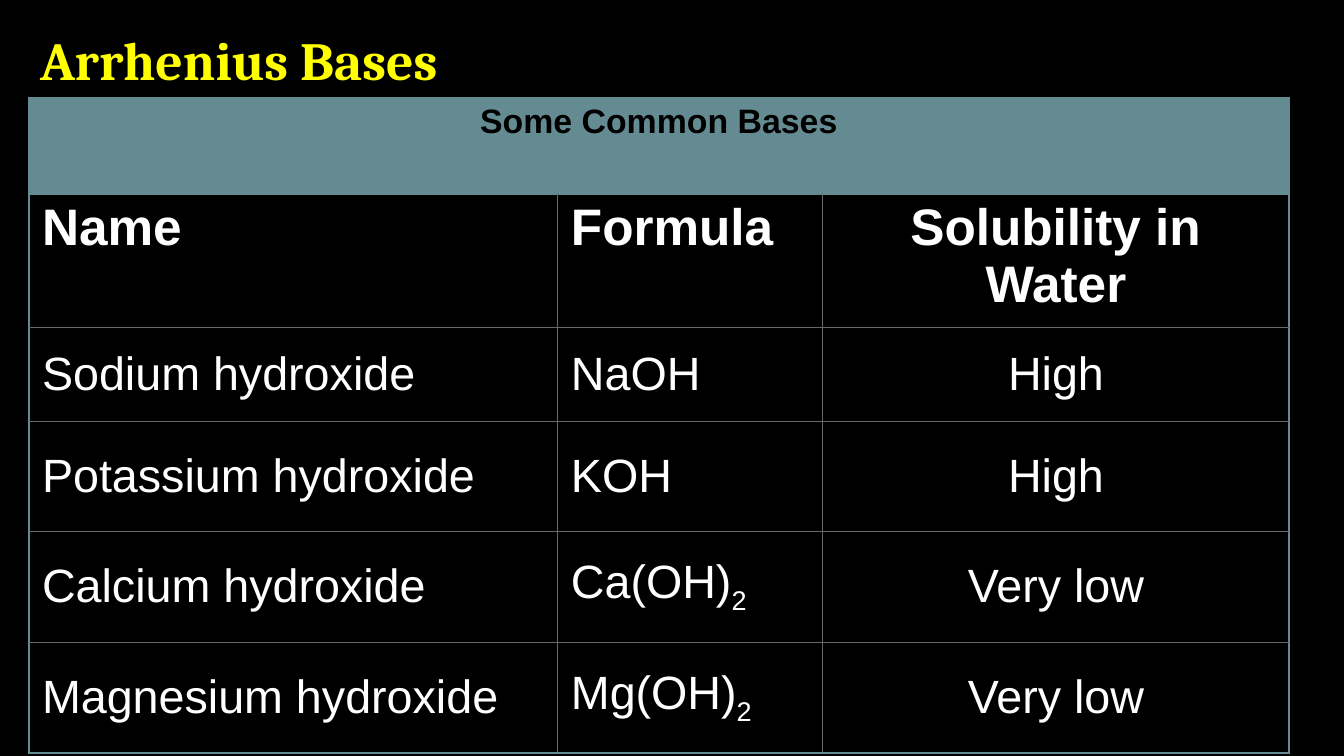
from dataclasses import dataclass

from lxml import etree
from pptx import Presentation
from pptx.dml.color import RGBColor
from pptx.enum.text import MSO_ANCHOR, MSO_AUTO_SIZE, PP_ALIGN
from pptx.oxml.ns import qn
from pptx.util import Emu, Pt

LEFT, CENTER = PP_ALIGN.LEFT, PP_ALIGN.CENTER
TOP, MIDDLE = MSO_ANCHOR.TOP, MSO_ANCHOR.MIDDLE
GROW = MSO_AUTO_SIZE.SHAPE_TO_FIT_TEXT
BLANK_LAYOUT = 6
PX_PER_INCH = 84


@dataclass(frozen=True)
class TextStyle:
    font: str
    size: int
    color: str
    bold: bool


@dataclass(frozen=True)
class Border:
    color: str
    width: float


@dataclass(frozen=True)
class Theme:
    background: str = "000000"
    band: str = "658B92"
    title: TextStyle = TextStyle("Cambria", 46, "FFFF00", True)
    caption: TextStyle = TextStyle("Arial", 29, "000000", True)
    heading: TextStyle = TextStyle("Arial", 44, "FFFFFF", True)
    body: TextStyle = TextStyle("Arial", 40, "FFFFFF", False)
    frame: Border = Border("658B92", 2.25)
    grid: Border = Border("69676D", 1)


@dataclass(frozen=True)
class Column:
    width: int
    align: PP_ALIGN


@dataclass(frozen=True)
class BaseRow:
    height: int
    name: str
    formula: str
    solubility: str
    subscript: str = ""


THEME = Theme()
COLUMNS = [Column(529, LEFT), Column(265, LEFT), Column(466, CENTER)]
CAPTION_HEIGHT = 96
ROWS = [
    BaseRow(133, "Name", "Formula", "Solubility in Water"),
    BaseRow(94, "Sodium hydroxide", "NaOH", "High"),
    BaseRow(110, "Potassium hydroxide", "KOH", "High"),
    BaseRow(111, "Calcium hydroxide", "Ca(OH)", "Very low", "2"),
    BaseRow(111, "Magnesium hydroxide", "Mg(OH)", "Very low", "2"),
]


def px(length: int) -> Emu:
    return Emu(round(length * 914400 / PX_PER_INCH))


def set_attributes(target, values: dict) -> None:
    for name, value in values.items():
        setattr(target, name, value)


def margins(horizontal: int, vertical: int) -> dict:
    return {
        "margin_left": px(horizontal),
        "margin_right": px(horizontal),
        "margin_top": px(vertical),
        "margin_bottom": px(vertical),
    }


def add_run(paragraph, text: str, style: TextStyle):
    run = paragraph.add_run()
    run.text = text
    set_attributes(run.font, {"name": style.font, "size": Pt(style.size), "bold": style.bold})
    run.font.color.rgb = RGBColor.from_string(style.color)
    return run


def add_border(cell, side: str, border: Border) -> None:
    """Append one edge line; edges must be added in the order L, R, T, B."""
    line = etree.SubElement(
        cell._tc.get_or_add_tcPr(), qn(f"a:ln{side}"), w=str(Pt(border.width))
    )
    fill = etree.SubElement(line, qn("a:solidFill"))
    etree.SubElement(fill, qn("a:srgbClr"), val=border.color)


def add_cell_borders(cell, row: int, column: int) -> None:
    framed = {
        "L": row == 0 or column == 0,
        "R": row == 0 or column == len(COLUMNS) - 1,
        "T": row <= 1,
        "B": row in (0, len(ROWS)),
    }
    for side, is_frame in framed.items():
        add_border(cell, side, THEME.frame if is_frame else THEME.grid)


def add_title(slide) -> None:
    box = slide.shapes.add_textbox(px(28), px(28), px(717), px(71))
    frame = box.text_frame
    set_attributes(frame, {"word_wrap": True, "auto_size": GROW, **margins(12, 6)})
    paragraph = frame.paragraphs[0]
    paragraph.line_spacing = 0.9
    add_run(paragraph, "Arrhenius Bases", THEME.title)


def fill_caption(table) -> None:
    last = len(COLUMNS) - 1
    for index in range(len(COLUMNS)):
        cell = table.cell(0, index)
        add_cell_borders(cell, 0, index)
        cell.fill.solid()
        cell.fill.fore_color.rgb = RGBColor.from_string(THEME.band)
    caption = table.cell(0, 0)
    caption.merge(table.cell(0, last))
    set_attributes(caption, {"vertical_anchor": TOP, **margins(13, 5)})
    paragraph = caption.text_frame.paragraphs[0]
    paragraph.alignment = CENTER
    add_run(paragraph, "Some Common Bases", THEME.caption)


def fill_row(table, index: int, row: BaseRow) -> None:
    is_heading = index == 1
    style = THEME.heading if is_heading else THEME.body
    anchor = TOP if is_heading else MIDDLE
    for position, text in enumerate((row.name, row.formula, row.solubility)):
        cell = table.cell(index, position)
        set_attributes(cell, {"vertical_anchor": anchor, **margins(13, 5)})
        add_cell_borders(cell, index, position)
        cell.fill.background()
        paragraph = cell.text_frame.paragraphs[0]
        paragraph.alignment = COLUMNS[position].align
        add_run(paragraph, text, style)
        if text == row.formula and row.subscript:
            subscript = add_run(paragraph, row.subscript, style)
            subscript._r.get_or_add_rPr().set("baseline", "-25000")


def add_bases_table(slide) -> None:
    heights = [CAPTION_HEIGHT] + [row.height for row in ROWS]
    width = sum(column.width for column in COLUMNS)
    table = slide.shapes.add_table(
        len(heights), len(COLUMNS), px(29), px(98), px(width), px(sum(heights))
    ).table
    set_attributes(table, {"first_row": False, "horz_banding": False})
    for table_column, column in zip(table.columns, COLUMNS):
        table_column.width = px(column.width)
    for table_row, height in zip(table.rows, heights):
        table_row.height = px(height)
    fill_caption(table)
    for index, row in enumerate(ROWS, start=1):
        fill_row(table, index, row)


def main() -> None:
    presentation = Presentation()
    presentation.slide_width = px(16 * PX_PER_INCH)
    presentation.slide_height = px(9 * PX_PER_INCH)
    slide = presentation.slides.add_slide(presentation.slide_layouts[BLANK_LAYOUT])
    slide.background.fill.solid()
    slide.background.fill.fore_color.rgb = RGBColor.from_string(THEME.background)
    add_title(slide)
    add_bases_table(slide)
    presentation.save("out.pptx")


if __name__ == "__main__":
    main()
